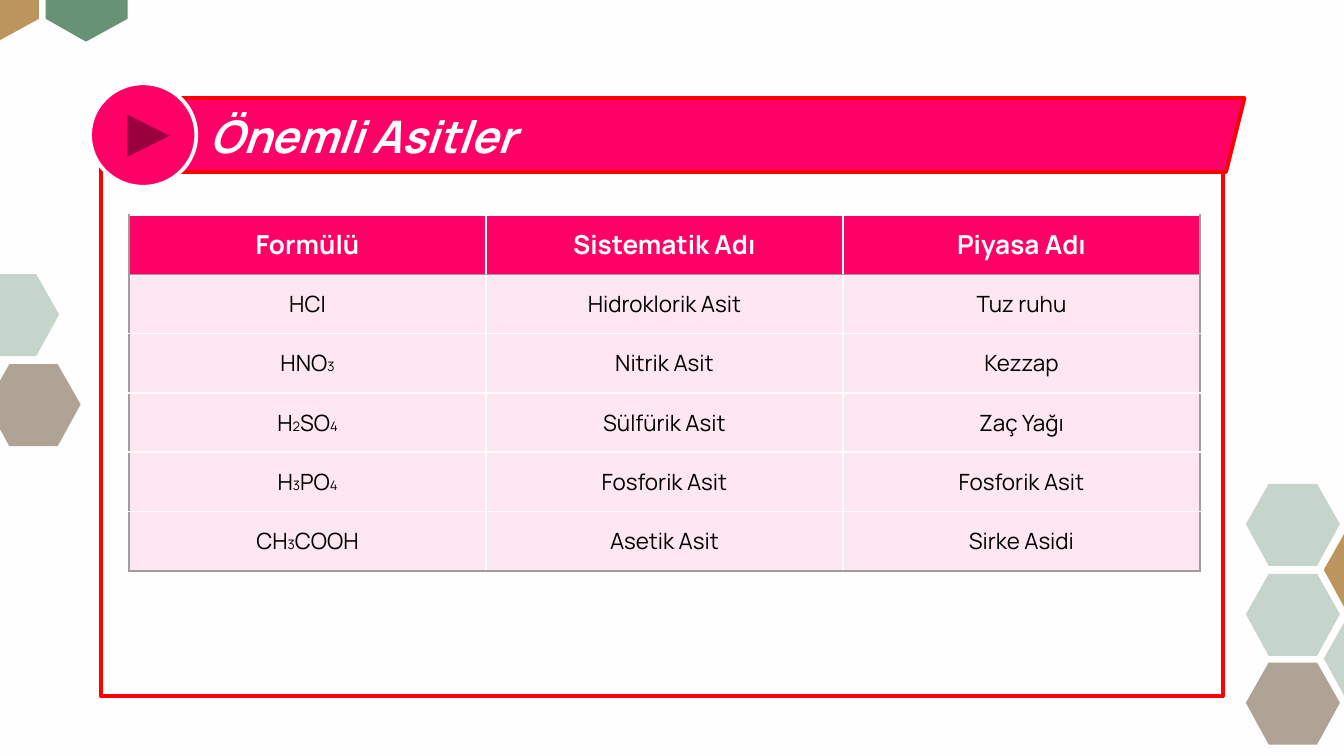
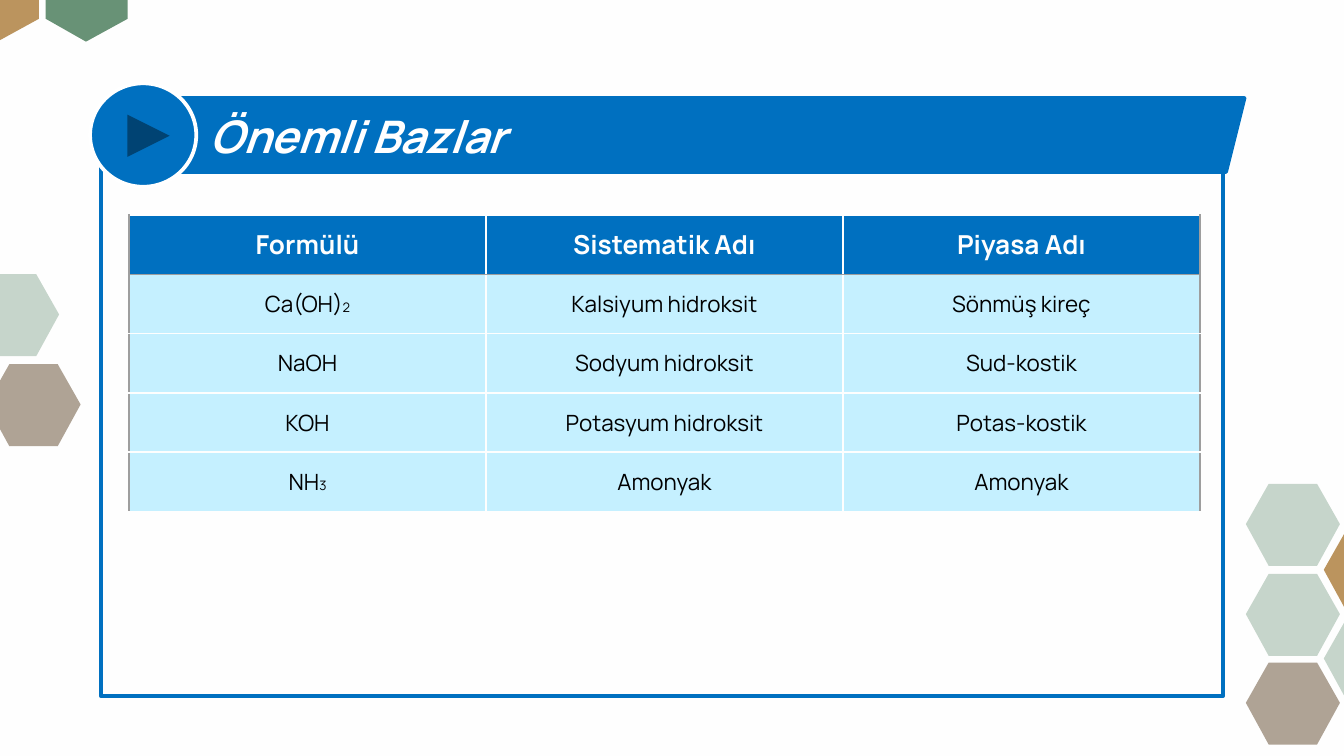
import dataclasses
import itertools

import pptx
import pptx.dml.color
import pptx.enum.shapes
import pptx.enum.text
import pptx.oxml.ns
import pptx.util
from lxml import etree

EMU_PER_PX = 9144  # 100 px to the inch
SHAPES = pptx.enum.shapes.MSO_SHAPE
ALIGN = pptx.enum.text.PP_ALIGN
ANCHOR = pptx.enum.text.MSO_ANCHOR
qn = pptx.oxml.ns.qn


@dataclasses.dataclass(frozen=True)
class Theme:
    font: str = "Manrope"
    paper: str = "FEFEFE"
    white: str = "FFFFFF"
    ink: str = "000000"
    grid: str = "9E9E9E"
    green: str = "004717"
    brown: str = "6D563C"
    gold: str = "BB945E"
    title_size: int = 24
    header_size: int = 14
    body_size: int = 12
    subscript_size: int = 7
    outline: float = 2
    inner_border: float = 1
    outer_border: float = 0.75


@dataclasses.dataclass(frozen=True)
class Accent:
    main: str
    outline: str
    tint: str


THEME = Theme()
PINK = Accent(main="FF0066", outline="FF0000", tint="FFE7F1")
BLUE = Accent(main="0070C0", outline="0070C0", tint="C5F0FF")

# left, top, colour, opacity in percent, pointed end up
HEXAGONS = [
    (985, 460, THEME.green, 22, False),
    (927, 360, THEME.green, 22, False),
    (927, 427, THEME.green, 22, False),
    (985, 394, THEME.gold, 100, False),
    (927, 493, THEME.brown, 54, False),
    (-26, 204, THEME.green, 22, False),
    (-10, 271, THEME.brown, 54, False),
    (-32, -39, THEME.gold, 100, True),
    (34, -39, THEME.green, 59, True),
]

HEADER = ["Formülü", "Sistematik Adı", "Piyasa Adı"]
ACIDS = [
    HEADER,
    ["HCI", "Hidroklorik Asit", "Tuz ruhu"],
    ["HNO3", "Nitrik Asit", "Kezzap"],
    ["H2SO4", "Sülfürik Asit", "Zaç Yağı"],
    ["H3PO4", "Fosforik Asit", "Fosforik Asit"],
    ["CH3COOH", "Asetik Asit", "Sirke Asidi"],
]
BASES = [
    HEADER,
    ["Ca(OH)2", "Kalsiyum hidroksit", "Sönmüş kireç"],
    ["NaOH", "Sodyum hidroksit", "Sud-kostik"],
    ["KOH", "Potasyum hidroksit", "Potas-kostik"],
    ["NH3", "Amonyak", "Amonyak"],
]


def px(length):
    return pptx.util.Emu(length * EMU_PER_PX)


def rgb(color):
    return pptx.dml.color.RGBColor.from_string(color)


def write_text(paragraph, text, *, size, color, bold=False, italic=False, align=ALIGN.LEFT):
    """Write the text, with every run of digits set as a small index."""
    paragraph.alignment = align
    for is_index, characters in itertools.groupby(text, str.isdigit):
        run = paragraph.add_run()
        run.text = "".join(characters)
        run.font.name = THEME.font
        run.font.size = pptx.util.Pt(THEME.subscript_size if is_index else size)
        run.font.bold = bold
        run.font.italic = italic
        run.font.color.rgb = rgb(color)


def set_borders(cell, borders):
    """Draw the borders, given as side to (colour, points), before any fill is set."""
    properties = cell._tc.get_or_add_tcPr()
    for side in "LRTB":
        color, width = borders[side]
        line = etree.SubElement(properties, qn(f"a:ln{side}"), w=str(pptx.util.Pt(width)))
        fill = etree.SubElement(line, qn("a:solidFill"))
        etree.SubElement(fill, qn("a:srgbClr"), val=color)


class Deck:
    def __init__(self, theme):
        self.theme = theme
        self.presentation = pptx.Presentation()
        self.presentation.slide_width = px(1000)
        self.presentation.slide_height = px(1000) * 9 // 16
        self.layout = self.presentation.slide_layouts.get_by_name("Title Only")
        background = self.layout.background.fill
        background.solid()
        background.fore_color.rgb = rgb(theme.paper)
        self.slide = None

    def start_slide(self):
        self.slide = self.presentation.slides.add_slide(self.layout)

    def add_shape(self, preset, left, top, width, height, fill, outline=None):
        shape = self.slide.shapes.add_shape(preset, px(left), px(top), px(width), px(height))
        self.paint(shape, fill, outline)

    def paint(self, shape, fill, outline=None, opacity=100):
        shape.shadow.inherit = False
        shape.fill.solid()
        shape.fill.fore_color.rgb = rgb(fill)
        if opacity < 100:
            color = next(shape.element.spPr.iter(qn("a:srgbClr")))
            etree.SubElement(color, qn("a:alpha"), val=str(opacity * 1000))
        if outline:
            shape.line.color.rgb = rgb(outline)
            shape.line.width = pptx.util.Pt(self.theme.outline)
        else:
            shape.line.fill.background()

    def add_layout_hexagon(self, left, top, color, opacity, pointed_up):
        """Draw a hexagon and hand it to the layout, so that all slides share it."""
        corners = [(17, 0), (53, 0), (70, 30), (53, 61), (17, 61), (0, 30)]
        if pointed_up:
            corners = [(y, x) for x, y in corners]
        points = [(left + x, top + y) for x, y in corners]
        builder = self.slide.shapes.build_freeform(*points[0], scale=EMU_PER_PX)
        builder.add_line_segments(points[1:], close=True)
        hexagon = builder.convert_to_shape()
        self.paint(hexagon, color, opacity=opacity)
        self.layout.shapes.element.append(hexagon.element)

    def add_title(self, text):
        title = self.slide.shapes.title
        self.slide.shapes.element.append(title.element)  # in front of the banner
        title.left, title.top, title.width, title.height = map(px, (146, 71, 776, 63))
        frame = title.text_frame
        frame.auto_size = pptx.enum.text.MSO_AUTO_SIZE.NONE
        frame.word_wrap = True
        frame.vertical_anchor = ANCHOR.TOP
        frame.margin_left = frame.margin_right = px(10)
        frame.margin_top = frame.margin_bottom = px(10)
        write_text(frame.paragraphs[0], text, size=self.theme.title_size,
                   color=self.theme.white, bold=True, italic=True)

    def add_titled_frame(self, title, accent):
        self.add_shape(SHAPES.RECTANGLE, 75, 101, 835, 417, self.theme.paper, accent.outline)
        self.add_shape(SHAPES.PARALLELOGRAM, 91, 73, 835, 55, accent.main, accent.outline)
        self.add_title(title)
        self.add_shape(SHAPES.OVAL, 67, 62, 79, 77, accent.main, self.theme.white)
        self.add_shape(SHAPES.ACTION_BUTTON_FORWARD_OR_NEXT, 87, 80, 47, 42, accent.main)

    def add_table(self, rows, accent, closed):
        """Add a table; a closed one has a grey line under its last row."""
        theme = self.theme
        inner = (theme.paper, theme.inner_border)
        outer = (theme.grid, theme.outer_border)
        last_row, last_column = len(rows) - 1, len(rows[0]) - 1
        height = px(265) * len(rows) // len(ACIDS)
        table = self.slide.shapes.add_table(
            len(rows), len(rows[0]), px(96), px(160), px(797), height).table
        table.horz_banding = False
        for row, texts in enumerate(rows):
            is_header = row == 0
            for column, text in enumerate(texts):
                cell = table.cell(row, column)
                set_borders(cell, {
                    "L": outer if column == 0 else inner,
                    "R": outer if column == last_column else inner,
                    "T": outer if row == 1 else inner,
                    "B": outer if is_header or (closed and row == last_row) else inner,
                })
                cell.fill.solid()
                cell.fill.fore_color.rgb = rgb(accent.main if is_header else accent.tint)
                cell.vertical_anchor = ANCHOR.MIDDLE
                write_text(cell.text_frame.paragraphs[0], text,
                           size=theme.header_size if is_header else theme.body_size,
                           color=theme.paper if is_header else theme.ink,
                           bold=is_header, align=ALIGN.CENTER)


def main():
    deck = Deck(THEME)

    deck.start_slide()
    for hexagon in HEXAGONS:
        deck.add_layout_hexagon(*hexagon)
    deck.add_titled_frame("Önemli Asitler", PINK)
    deck.add_table(ACIDS, PINK, closed=True)

    deck.start_slide()
    deck.add_titled_frame("Önemli Bazlar", BLUE)
    deck.add_table(BASES, BLUE, closed=False)

    deck.presentation.save("out.pptx")


if __name__ == "__main__":
    main()
